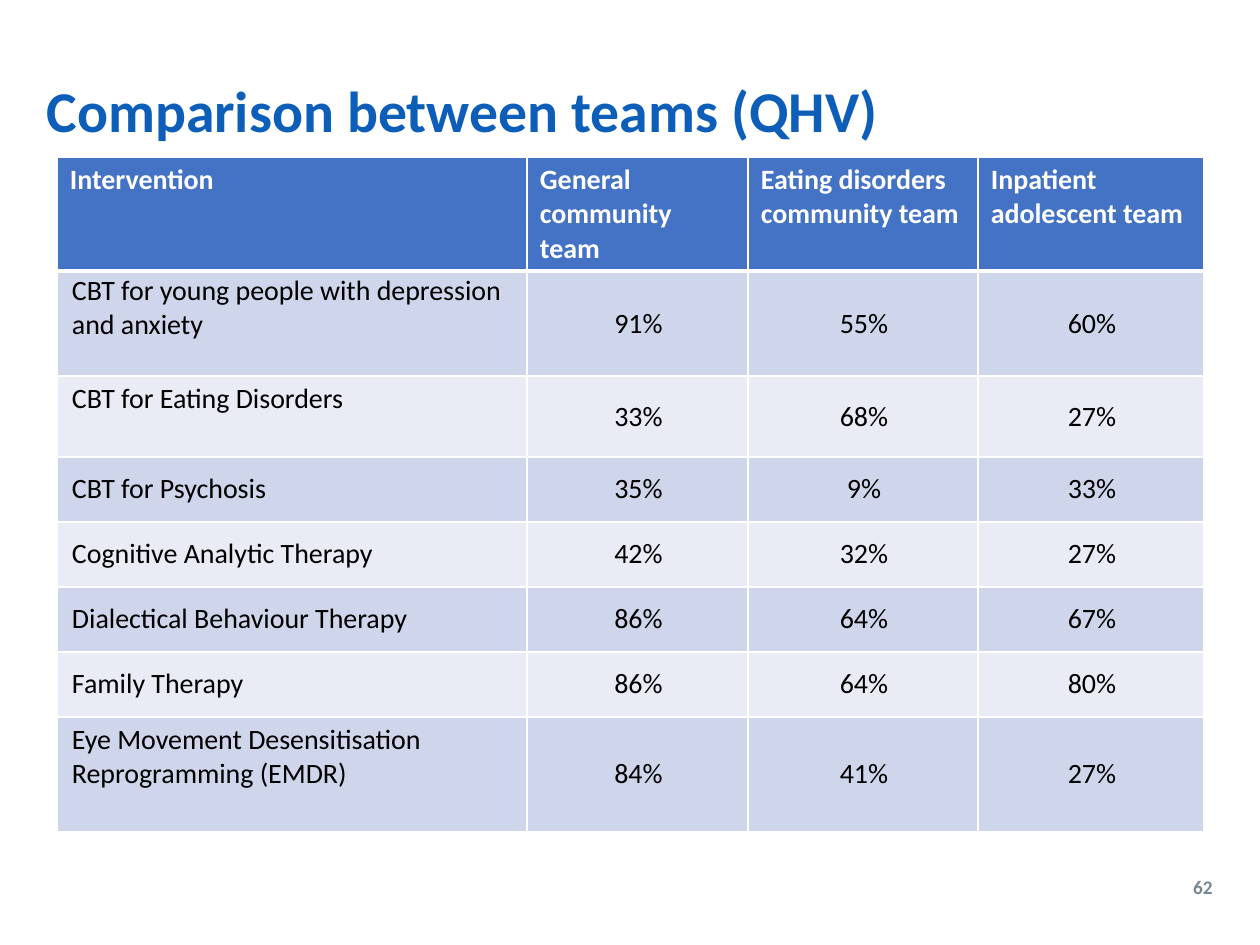
"""Build the slide comparing interventions offered by three teams."""
from dataclasses import dataclass

from lxml import etree
from pptx import Presentation
from pptx.dml.color import RGBColor
from pptx.enum.text import MSO_ANCHOR, PP_ALIGN
from pptx.oxml.ns import qn
from pptx.util import Pt

TOP, MIDDLE = MSO_ANCHOR.TOP, MSO_ANCHOR.MIDDLE
LEFT, CENTER, RIGHT = PP_ALIGN.LEFT, PP_ALIGN.CENTER, PP_ALIGN.RIGHT
EMU_PER_PX = 914400 / 126
EMU_PER_POINT = 12700
FONT = "Calibri"
COLORS = {
    "title": "0D5EB8",
    "number": "768691",
    "header": "4472C4",
    "odd": "CFD5EA",
    "even": "E9EBF5",
    "white": "FFFFFF",
    "black": "000000",
}


@dataclass(frozen=True)
class TextStyle:
    size: int
    color: str
    bold: bool = False
    align: PP_ALIGN = LEFT


@dataclass(frozen=True)
class CellStyle:
    text: TextStyle
    fill: str
    anchor: MSO_ANCHOR = MIDDLE
    margins: tuple[int, int, int, int] = (15, 6, 13, 6)
    bottom_border: int = 1


@dataclass(frozen=True)
class Intervention:
    name: str
    shares: tuple[str, str, str]
    height: int
    anchor: MSO_ANCHOR = MIDDLE
    margins: tuple[int, int, int, int] = (15, 6, 13, 6)


HEADERS = (
    "Intervention",
    "General community team",
    "Eating disorders community team",
    "Inpatient adolescent team",
)
HEADER_HEIGHT = 114
COLUMN_WIDTHS = (470, 221, 230, 226)
INTERVENTIONS = (
    Intervention("CBT for young people with depression and anxiety",
                 ("91%", "55%", "60%"), 105, TOP, (15, 3, 1, 0)),
    Intervention("CBT for Eating Disorders", ("33%", "68%", "27%"), 81, TOP),
    Intervention("CBT for Psychosis", ("35%", "9%", "33%"), 65),
    Intervention("Cognitive Analytic Therapy", ("42%", "32%", "27%"), 65),
    Intervention("Dialectical Behaviour Therapy", ("86%", "64%", "67%"), 65),
    Intervention("Family Therapy", ("86%", "64%", "80%"), 65),
    Intervention("Eye Movement Desensitisation Reprogramming (EMDR)",
                 ("84%", "41%", "27%"), 115, TOP),
)


def px(length: int) -> int:
    return round(length * EMU_PER_PX)


def place(shape, left: int, top: int, width: int, height: int) -> None:
    shape.left, shape.top = px(left), px(top)
    shape.width, shape.height = px(width), px(height)


def write(text_frame, text: str, style: TextStyle):
    text_frame.word_wrap = True
    paragraph = text_frame.paragraphs[0]
    paragraph.alignment = style.align
    run = paragraph.add_run()
    run.text = text
    run.font.name = FONT
    run.font.size = Pt(style.size)
    run.font.bold = style.bold
    run.font.color.rgb = RGBColor.from_string(COLORS[style.color])
    return paragraph


def add_borders(cell, bottom: int) -> None:
    properties = cell._tc.get_or_add_tcPr()
    for side, points in (("L", 1), ("R", 1), ("T", 1), ("B", bottom)):
        line = etree.SubElement(properties, qn(f"a:ln{side}"), w=str(points * EMU_PER_POINT))
        fill = etree.SubElement(line, qn("a:solidFill"))
        etree.SubElement(fill, qn("a:srgbClr"), val=COLORS["white"])


def fill_cell(cell, text: str, style: CellStyle) -> None:
    left, top, right, bottom = style.margins
    cell.margin_left, cell.margin_top = px(left), px(top)
    cell.margin_right, cell.margin_bottom = px(right), px(bottom)
    cell.vertical_anchor = style.anchor
    add_borders(cell, style.bottom_border)
    cell.fill.solid()
    cell.fill.fore_color.rgb = RGBColor.from_string(COLORS[style.fill])
    write(cell.text_frame, text, style.text)


def add_title(slide) -> None:
    title = slide.shapes.title
    place(title, 34, 53, 1191, 122)
    title.text_frame.vertical_anchor = MIDDLE
    paragraph = write(title.text_frame, "Comparison between teams (QHV)",
                      TextStyle(33, "title", True))
    paragraph.line_spacing = 0.9


def add_page_number(slide) -> None:
    box = slide.shapes.add_textbox(0, 0, 0, 0)
    place(box, 1002, 862, 223, 50)
    box.text_frame.vertical_anchor = MIDDLE
    write(box.text_frame, "62", TextStyle(11, "number", True, RIGHT))


def add_comparison_table(slide) -> None:
    heights = (HEADER_HEIGHT, *(item.height for item in INTERVENTIONS))
    table = slide.shapes.add_table(
        len(heights), len(COLUMN_WIDTHS), px(57), px(157),
        px(sum(COLUMN_WIDTHS)), px(sum(heights))).table
    for column, width in zip(table.columns, COLUMN_WIDTHS):
        column.width = px(width)
    for row, height in zip(table.rows, heights):
        row.height = px(height)

    header_style = CellStyle(TextStyle(16, "white", True), "header", TOP, (13, 6, 13, 6), 3)
    for column, text in enumerate(HEADERS):
        fill_cell(table.cell(0, column), text, header_style)
    for row, item in enumerate(INTERVENTIONS, start=1):
        fill = "odd" if row % 2 else "even"
        name_style = CellStyle(TextStyle(16, "black"), fill, item.anchor, item.margins)
        share_style = CellStyle(TextStyle(16, "black", align=CENTER), fill)
        fill_cell(table.cell(row, 0), item.name, name_style)
        for column, share in enumerate(item.shares, start=1):
            fill_cell(table.cell(row, column), share, share_style)


def main() -> None:
    presentation = Presentation()
    presentation.slide_width, presentation.slide_height = px(1260), px(945)
    slide = presentation.slides.add_slide(presentation.slide_layouts[5])
    add_title(slide)
    add_page_number(slide)
    add_comparison_table(slide)
    presentation.save("out.pptx")


if __name__ == "__main__":
    main()
